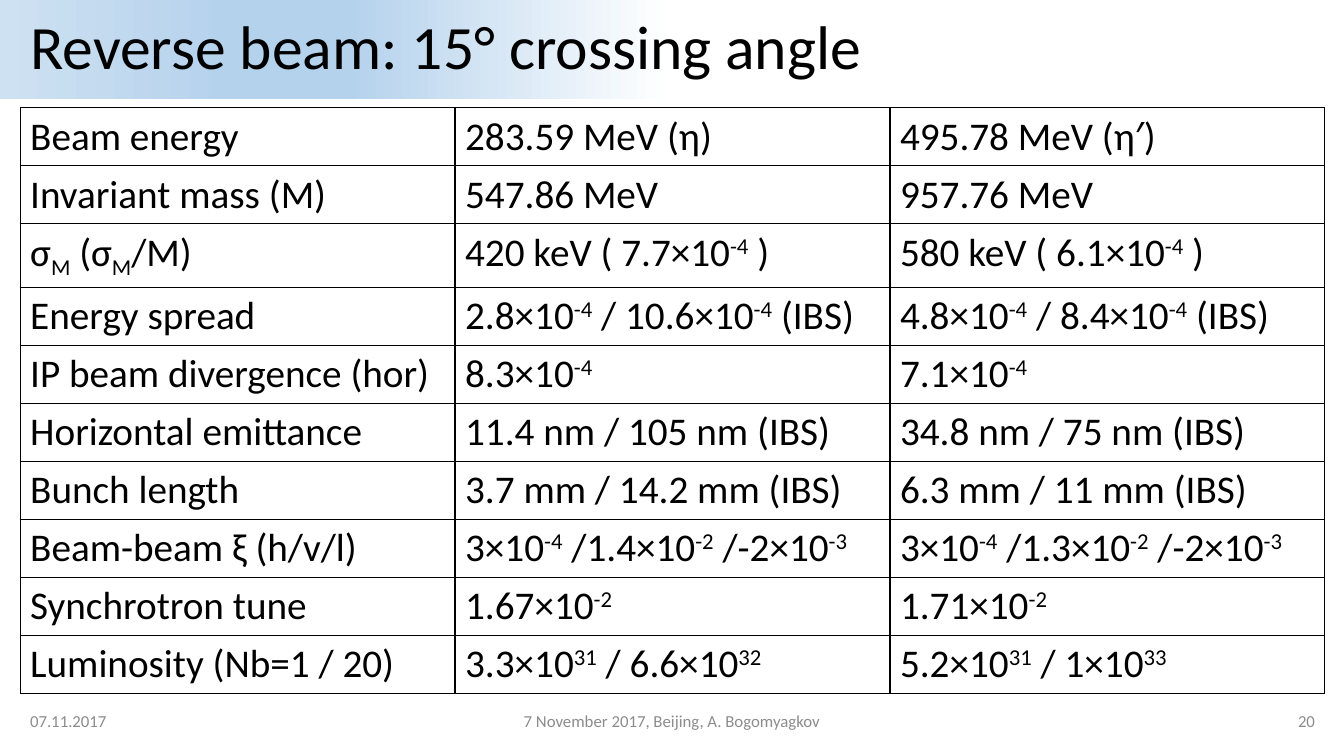
from lxml.etree import SubElement
from pptx import Presentation
from pptx.dml.color import RGBColor
from pptx.enum.text import MSO_ANCHOR, MSO_AUTO_SIZE, PP_ALIGN
from pptx.oxml.ns import qn
from pptx.util import Pt

BASELINES = {"^": "30000", "_": "-25000"}


def color(hex_string):
    return RGBColor.from_string(hex_string)


def write_text(frame, text, size=28, hex_color="000000", align=PP_ALIGN.LEFT,
               anchor=MSO_ANCHOR.MIDDLE, spacing=1.0):
    """Write one paragraph; parts between bars are raised by ^ or lowered by _."""
    frame.word_wrap = True
    frame.vertical_anchor = anchor
    paragraph = frame.paragraphs[0]
    paragraph.alignment = align
    paragraph.line_spacing = spacing
    for part in filter(None, text.split("|")):
        run = paragraph.add_run()
        run.text = part.lstrip("^_")
        run.font.name = "Calibri"
        run.font.size = Pt(size)
        run.font.color.rgb = color(hex_color)
        if part[0] in BASELINES:
            run._r.get_or_add_rPr().set("baseline", BASELINES[part[0]])


presentation = Presentation()
presentation.slide_width = Pt(960)
presentation.slide_height = Pt(540)
slide = presentation.slides.add_slide(presentation.slide_layouts[5])

# Title on a gradient band
title = slide.shapes.title
title.left, title.top, title.width, title.height = Pt(0), Pt(0), Pt(960), Pt(70.6)
title.fill.gradient()
title.fill.gradient_angle = 180
stop_list = title._element.spPr.find(".//" + qn("a:gsLst"))
stop_list.clear()
for position, stop_color in [(50, "FFFFFF"), (74, "B5D2EC"), (83, "B5D2EC"), (100, "CEE1F2")]:
    stop = SubElement(stop_list, qn("a:gs"), pos=str(position * 1000))
    SubElement(stop, qn("a:srgbClr"), val=stop_color)
title.text_frame.auto_size = MSO_AUTO_SIZE.NONE
title.text_frame.margin_left = Pt(21.6)
write_text(title.text_frame, "Reverse beam: 15° crossing angle", size=44, spacing=0.9)

# Parameter table
parameters = [
    ("Beam energy", "283.59 MeV (η)", "495.78 MeV (η′)"),
    ("Invariant mass (M)", "547.86 MeV", "957.76 MeV"),
    ("σ|_M| (σ|_M|/M)", "420 keV ( 7.7×10|^-4| )", "580 keV ( 6.1×10|^-4| )"),
    ("Energy spread", "2.8×10|^-4| / 10.6×10|^-4| (IBS)", "4.8×10|^-4| / 8.4×10|^-4| (IBS)"),
    ("IP beam divergence (hor)", "8.3×10|^-4", "7.1×10|^-4"),
    ("Horizontal emittance", "11.4 nm / 105 nm (IBS)", "34.8 nm / 75 nm (IBS)"),
    ("Bunch length", "3.7 mm / 14.2 mm (IBS)", "6.3 mm / 11 mm (IBS)"),
    ("Beam-beam ξ (h/v/l)", "3×10|^-4| /1.4×10|^-2| /-2×10|^-3", "3×10|^-4| /1.3×10|^-2| /-2×10|^-3"),
    ("Synchrotron tune", "1.67×10|^-2", "1.71×10|^-2"),
    ("Luminosity (Nb=1 / 20)", "3.3×10|^31| / 6.6×10|^32", "5.2×10|^31| / 1×10|^33"),
]
table = slide.shapes.add_table(len(parameters), 3, Pt(14.4), Pt(77), Pt(932), Pt(408)).table
table.first_row = False
table.horz_banding = False
for row_index, row in enumerate(parameters):
    for column_index, text in enumerate(row):
        cell = table.cell(row_index, column_index)
        write_text(cell.text_frame, text, anchor=MSO_ANCHOR.TOP)
        properties = cell._tc.get_or_add_tcPr()
        for side in ("lnL", "lnR", "lnT", "lnB"):
            border = SubElement(properties, qn("a:" + side), w=str(Pt(1)))
            border_fill = SubElement(border, qn("a:solidFill"))
            SubElement(border_fill, qn("a:srgbClr"), val="000000")
        cell.fill.background()
        # The schema wants the fill after the border lines
        properties.append(properties.find(qn("a:noFill")))

# Footer: date, event, slide number
footers = [
    ("07.11.2017", 14.4, 216, PP_ALIGN.LEFT),
    ("7 November 2017, Beijing, A. Bogomyagkov", 318, 324, PP_ALIGN.CENTER),
    ("20", 730.4, 216, PP_ALIGN.RIGHT),
]
for text, left, width, align in footers:
    footer = slide.shapes.add_textbox(Pt(left), Pt(500.4), Pt(width), Pt(28.8))
    write_text(footer.text_frame, text, size=12, hex_color="8C8C8C", align=align)

presentation.save("out.pptx")
